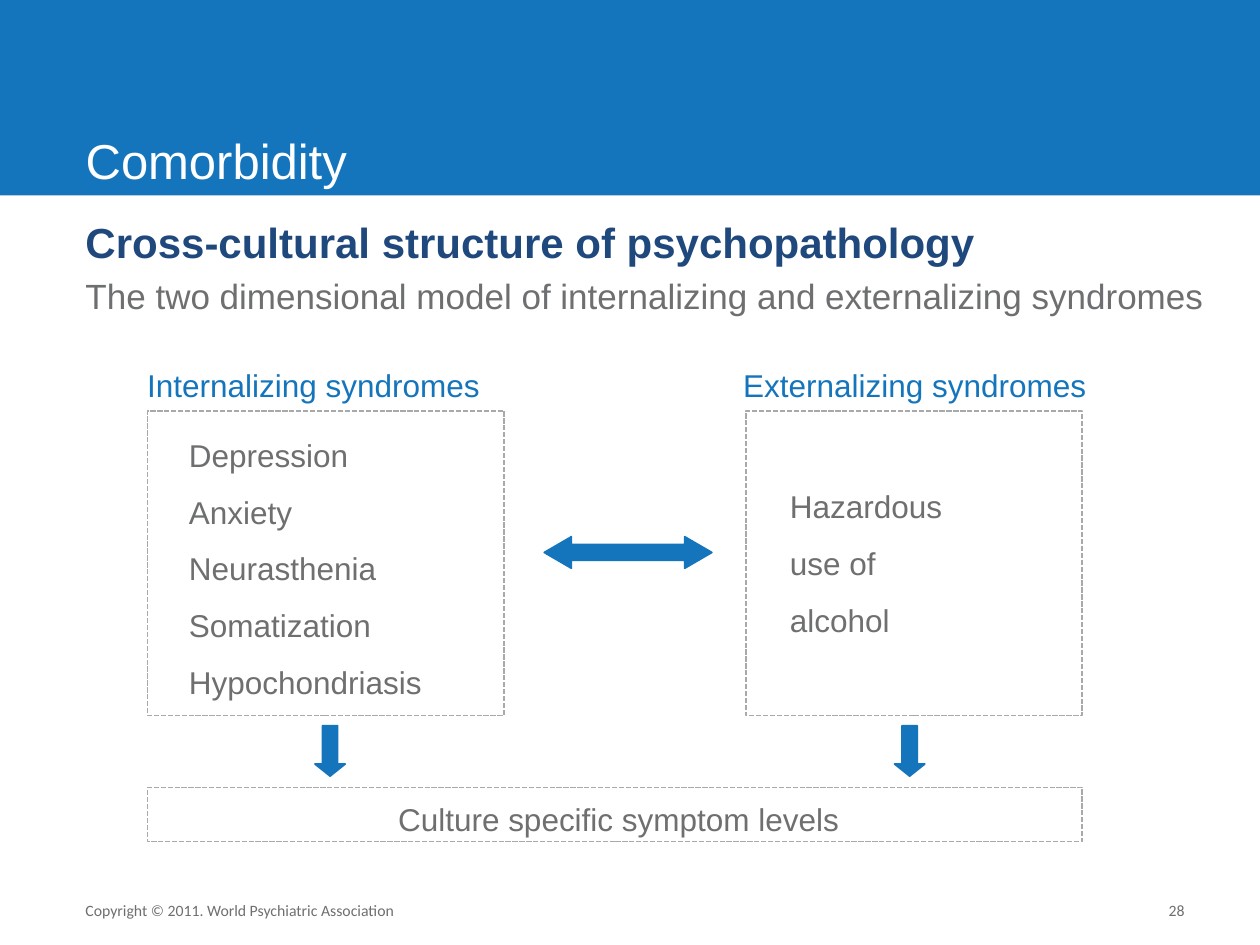
"""Build the slide on the cross-cultural structure of psychopathology."""
from pptx import Presentation
from pptx.dml.color import RGBColor
from pptx.enum.dml import MSO_LINE
from pptx.enum.shapes import MSO_SHAPE
from pptx.enum.text import MSO_ANCHOR, PP_ALIGN
from pptx.util import Inches, Pt

RECTANGLE = MSO_SHAPE.RECTANGLE
DOWN, LEFT_RIGHT = MSO_SHAPE.DOWN_ARROW, MSO_SHAPE.LEFT_RIGHT_ARROW
DASH = MSO_LINE.SQUARE_DOT
TOP, BOTTOM = MSO_ANCHOR.TOP, MSO_ANCHOR.BOTTOM
LEFT, CENTER, RIGHT = PP_ALIGN.LEFT, PP_ALIGN.CENTER, PP_ALIGN.RIGHT

BLUE = RGBColor(0x14, 0x75, 0xBC)
NAVY = RGBColor(0x1F, 0x49, 0x7D)
GRAY = RGBColor(0x6D, 0x6F, 0x71)
SILVER = RGBColor(0xA7, 0xA9, 0xAA)
WHITE = RGBColor(0xFF, 0xFF, 0xFF)

TITLE = "Comorbidity"
HEADING = "Cross-cultural structure of psychopathology"
SUBHEADING = "The two dimensional model of internalizing and externalizing syndromes"
LABELS = [
    ("Internalizing syndromes", (1.07, 2.86, 2.87, 0.4)),
    ("Externalizing syndromes", (5.8, 2.86, 2.95, 0.4)),
]
LISTS = [
    (["Depression", "Anxiety", "Neurasthenia", "Somatization", "Hypochondriasis"],
     (1.4, 3.26, 2.25, 2.32), LEFT),
    (["Hazardous", "use of", "alcohol"], (6.17, 3.67, 2.25, 1.46), LEFT),
    (["Culture specific symptom levels"], (1.57, 6.15, 6.68, 0.5), CENTER),
]
FRAMES = [(1.17, 3.26, 2.83, 2.42), (5.92, 3.26, 2.67, 2.42), (1.17, 6.25, 7.42, 0.43)]
ARROWS = [
    (DOWN, (2.5, 5.76, 0.24, 0.4), 0.4),
    (DOWN, (7.1, 5.76, 0.24, 0.4), 0.4),
    (LEFT_RIGHT, (4.32, 4.26, 1.33, 0.25), 0.86),
]
FOOTERS = [
    ("Copyright © 2011. World Psychiatric Association", (0.58, 6.95, 3.17, 0.4), LEFT),
    ("28", (7.17, 6.95, 2.33, 0.4), RIGHT),
]


def inches(place):
    return [Inches(length) for length in place]


def style(paragraph, size, color, font="Arial", bold=False):
    paragraph.font.name = font
    paragraph.font.size = Pt(size)
    paragraph.font.bold = bold
    paragraph.font.color.rgb = color


def add_text(slide, lines, place, size, color, font="Arial",
             align=LEFT, anchor=TOP, spacing=1.0, wrap=True):
    frame = slide.shapes.add_textbox(*inches(place)).text_frame
    frame.word_wrap = wrap
    frame.vertical_anchor = anchor
    frame.text = "\n".join(lines)
    for paragraph in frame.paragraphs:
        paragraph.alignment = align
        paragraph.line_spacing = spacing
        style(paragraph, size, color, font)
    return frame


def add_shape(slide, kind, place, fill=None, line=None):
    shape = slide.shapes.add_shape(kind, *inches(place))
    shape.shadow.inherit = False
    if fill is None:
        shape.fill.background()
    else:
        shape.fill.solid()
        shape.fill.fore_color.rgb = fill
    if line is None:
        shape.line.fill.background()
    else:
        shape.line.color.rgb = line
        shape.line.width = Pt(1)
    return shape


def add_title(slide):
    title = slide.shapes.title
    title.left, title.top, title.width, title.height = inches((0.58, 0.3, 7.94, 1.25))
    title.text_frame.text = TITLE
    title.text_frame.vertical_anchor = BOTTOM
    paragraph = title.text_frame.paragraphs[0]
    paragraph.alignment = LEFT
    style(paragraph, 28, WHITE)
    band = add_shape(slide, RECTANGLE, (0, 0, 10, 1.55), fill=BLUE)
    title.element.addprevious(band.element)


def main():
    deck = Presentation()
    deck.slide_width, deck.slide_height = Inches(10), Inches(7.5)
    slide = deck.slides.add_slide(deck.slide_layouts[5])
    add_title(slide)

    intro = add_text(slide, [HEADING, SUBHEADING], (0.58, 1.67, 9.42, 1.38), 20, GRAY)
    heading, subheading = intro.paragraphs
    style(heading, 24, NAVY, bold=True)
    subheading.space_before = Pt(4)

    for place in FRAMES:
        frame = add_shape(slide, RECTANGLE, place, line=SILVER)
        frame.line.dash_style = DASH
    for lines, place, align in LISTS:
        add_text(slide, lines, place, 18, GRAY, align=align, spacing=1.5)
    for kind, place, head in ARROWS:
        arrow = add_shape(slide, kind, place, fill=BLUE, line=BLUE)
        arrow.adjustments[0] = 0.5
        arrow.adjustments[1] = head
    for label, place in LABELS:
        add_text(slide, [label], place, 18, BLUE, wrap=False)
    for footer, place, align in FOOTERS:
        add_text(slide, [footer], place, 9, GRAY, "Calibri", align, BOTTOM)

    deck.save("out.pptx")


if __name__ == "__main__":
    main()
